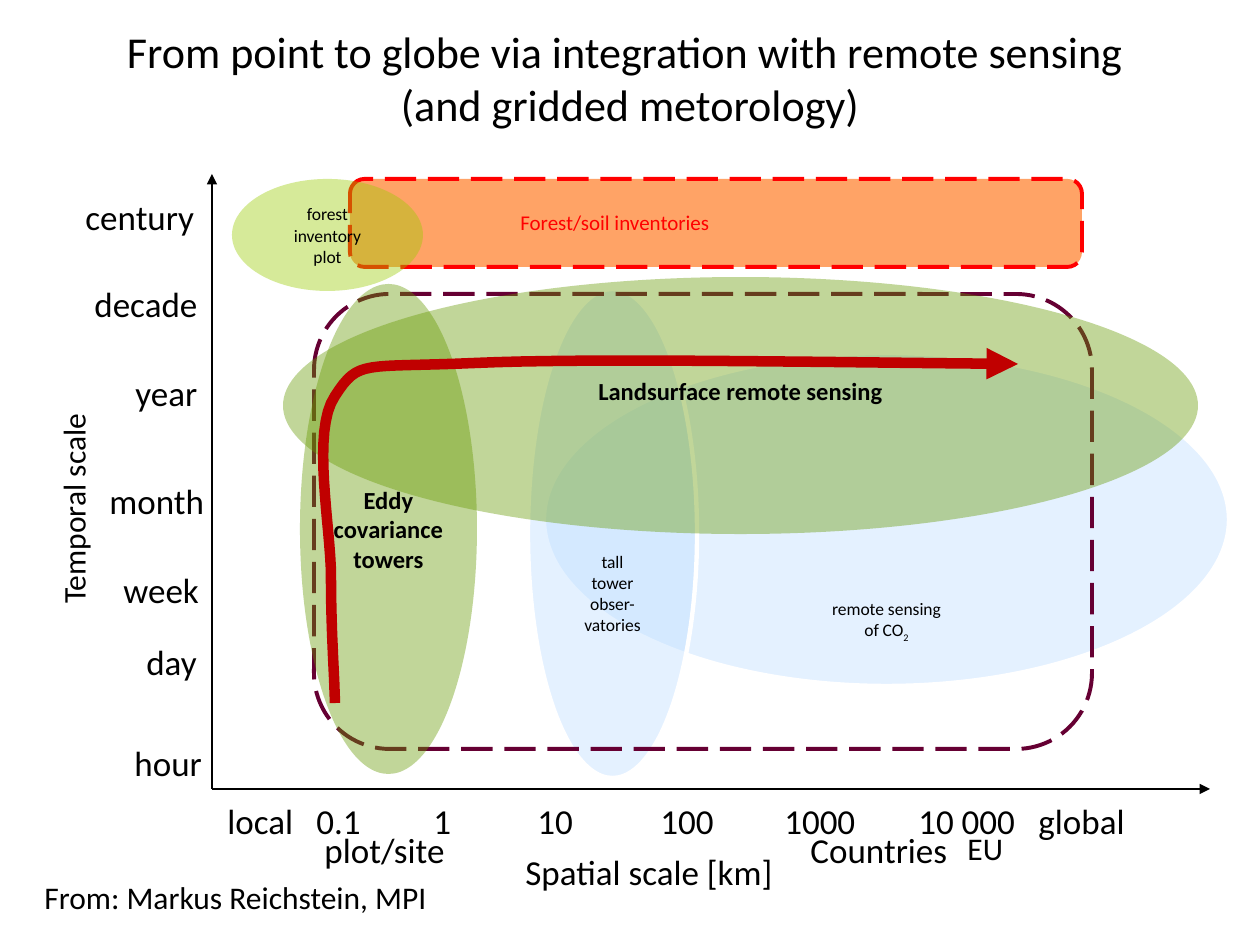
import pptx
import pptx.util
import pptx.dml.color
import pptx.enum.dml
import pptx.enum.shapes
import pptx.enum.text
import pptx.oxml
import pptx.oxml.ns

RGBColor = pptx.dml.color.RGBColor
Pt = pptx.util.Pt
Shape = pptx.enum.shapes.MSO_SHAPE
Anchor = pptx.enum.text.MSO_ANCHOR
Align = pptx.enum.text.PP_ALIGN

BLACK = RGBColor(0, 0, 0)
WHITE = RGBColor(255, 255, 255)
RED = RGBColor(0xFF, 0, 0)
ORANGE = RGBColor(0xFF, 0x66, 0)
LIGHT_BLUE = RGBColor(0xBD, 0xDE, 0xFF)
LIME = RGBColor(0x99, 0xCC, 0)
GREEN = RGBColor(0x66, 0x99, 0)
PLUM = RGBColor(0x66, 0, 0x33)
DARK_RED = RGBColor(0xC0, 0, 0)
PX = 914400 / 126


def px(*lengths):
    return [round(length * PX) for length in lengths]


def format_text(text_frame, size, color=BLACK, bold=False, align=Align.LEFT):
    for paragraph in text_frame.paragraphs:
        paragraph.alignment = align
        for run in paragraph.runs:
            run.font.name = "Calibri"
            run.font.size = Pt(size)
            run.font.bold = bold
            run.font.color.rgb = color


presentation = pptx.Presentation()
presentation.slide_width, presentation.slide_height = px(1260, 945)
slide = presentation.slides.add_slide(presentation.slide_layouts[5])

# Title
title = slide.shapes.title
title.left, title.top, title.width, title.height = px(63, 38, 1134, 78)
title.text_frame.text = (
    "From point to globe via integration with remote sensing \v(and gridded metorology)"
)
title.text_frame.vertical_anchor = Anchor.MIDDLE
title.text_frame.auto_size = pptx.enum.text.MSO_AUTO_SIZE.NONE
format_text(title.text_frame, 25.2, align=Align.CENTER)

# Axes
axes = []
for end_x, end_y in [(1210, 789), (212, 174)]:
    axis = slide.shapes.add_connector(
        pptx.enum.shapes.MSO_CONNECTOR.STRAIGHT, *px(212, 789, end_x, end_y)
    )
    axis.line.color.rgb = BLACK
    axis.line.width = Pt(0.75)
    axes.append(axis)

# Observation ranges, back to front:
# kind, box, fill, opacity %, line (colour, width, dashed), text, size, bold, anchor, bottom inset
RANGES = [
    (Shape.ROUNDED_RECTANGLE, (350, 179, 732, 88), ORANGE, 60, (RED, 2.25, True),
     "", 10, False, Anchor.MIDDLE, 6),
    (Shape.OVAL, (544, 353, 685, 333), LIGHT_BLUE, 40, (WHITE, 2.5, False),
     "remote sensing\vof CO", 10, False, Anchor.BOTTOM, -6),
    (Shape.OVAL, (232, 179, 191, 112), LIME, 40, None,
     "forest\vinventory\vplot", 10, False, Anchor.MIDDLE, 6),
    (Shape.OVAL, (528, 289, 169, 489), LIGHT_BLUE, 40, (WHITE, 2.5, False),
     "tall\vtower\vobser-\nvatories", 10, False, Anchor.BOTTOM, 71),
    (Shape.ROUNDED_RECTANGLE, (314, 294, 778, 455), None, 100, (PLUM, 2.25, True),
     "", 10, False, Anchor.MIDDLE, 6),
    (Shape.OVAL, (300, 284, 177, 490), GREEN, 40, None,
     "Eddy\vcovariance\vtowers", 14, True, Anchor.MIDDLE, 6),
    (Shape.OVAL, (283, 277, 915, 257), GREEN, 40, None,
     "Landsurface remote sensing", 14, True, Anchor.MIDDLE, 36),
]
for kind, box, fill, opacity, line, text, size, bold, anchor, inset in RANGES:
    shape = slide.shapes.add_shape(kind, *px(*box))
    shape.shadow.inherit = False
    if fill is None:
        shape.fill.background()
    else:
        shape.fill.solid()
        shape.fill.fore_color.rgb = fill
        color_element = shape.element.xpath("p:spPr/a:solidFill/a:srgbClr")[0]
        alpha = pptx.oxml.parse_xml(
            f'<a:alpha {pptx.oxml.ns.nsdecls("a")} val="{opacity * 1000}"/>'
        )
        color_element.append(alpha)
    if line is None:
        shape.line.fill.background()
    else:
        line_color, line_width, dashed = line
        shape.line.color.rgb = line_color
        shape.line.width = Pt(line_width)
        if dashed:
            shape.line.dash_style = pptx.enum.dml.MSO_LINE.LONG_DASH
    if text:
        text_frame = shape.text_frame
        text_frame.word_wrap = False
        text_frame.vertical_anchor = anchor
        text_frame.margin_bottom = px(inset)[0]
        text_frame.text = text
        if text.endswith("CO"):
            subscript = text_frame.paragraphs[0].add_run()
            subscript.text = "2"
        format_text(text_frame, size, bold=bold, align=Align.CENTER)
        if text.endswith("CO"):
            shape.element.xpath(".//a:rPr")[-1].set("baseline", "-25000")

# Labels: text, left, top, width, size, colour
LABELS = [
    ("century", 73, 189, 135, 20, BLACK),
    ("decade", 82, 276, 130, 20, BLACK),
    ("year", 123, 365, 88, 20, BLACK),
    ("month", 97, 473, 121, 20, BLACK),
    ("week", 111, 562, 102, 20, BLACK),
    ("day", 134, 634, 77, 20, BLACK),
    ("hour", 122, 735, 93, 20, BLACK),
    ("Spatial scale [km]", 513, 844, 276, 20, BLACK),
    ("plot/site", 312, 822, 147, 20, BLACK),
    ("Countries", 798, 822, 164, 20, BLACK),
    ("EU", 955, 823, 69, 18, BLACK),
    ("Forest/soil inventories", 508, 203, 217, 12, RED),
    ("From: Markus Reichstein, MPI", 32, 872, 412, 18, BLACK),
]
for text, left, top, width, size, color in LABELS:
    label = slide.shapes.add_textbox(*px(left, top, width, 13 + round(size * 2.13)))
    label.text_frame.word_wrap = False
    label.text_frame.text = text
    format_text(label.text_frame, size, color)

# Vertical axis title
axis_title = slide.shapes.add_textbox(*px(48, 388, 63, 228))
axis_title.text_frame.word_wrap = False
axis_title.text_frame.text = "Temporal scale"
axis_title.element.xpath(".//a:bodyPr")[0].set("vert", "vert270")
format_text(axis_title.text_frame, 18)

# Spatial scale ticks, set on tab stops
TICKS = ["local", "0.1", "1", "10", "100", "1000", "10 000", "global"]
TAB_STOPS = [89, 206, 310, 433, 557, 691, 811]
tick_row = slide.shapes.add_textbox(*px(215, 793, 945, 55))
tick_row.text_frame.word_wrap = True
tick_row.text_frame.text = "\t".join(TICKS)
format_text(tick_row.text_frame, 20)
tabs = "".join(f'<a:tab pos="{position}" algn="l"/>' for position in px(*TAB_STOPS))
tick_row.element.xpath(".//a:pPr")[0].append(
    pptx.oxml.parse_xml(f'<a:tabLst {pptx.oxml.ns.nsdecls("a")}>{tabs}</a:tabLst>')
)

# Upscaling arrow: cubic curves sampled into short steps
CURVES = [
    [(335, 703), (334, 667), (331, 629), (331, 577)],
    [(331, 577), (331, 527), (311, 431), (335, 396)],
    [(335, 396), (359, 359), (362, 368), (475, 363)],
    [(475, 363), (588, 358), (804, 362), (1018, 364)],
]
STEPS = 16
points = []
for start, control_1, control_2, end in CURVES:
    for step in range(1, STEPS + 1):
        t = step / STEPS
        weights = [(1 - t) ** 3, 3 * t * (1 - t) ** 2, 3 * t ** 2 * (1 - t), t ** 3]
        curve = list(zip(weights, (start, control_1, control_2, end)))
        points.append(px(sum(w * p[0] for w, p in curve), sum(w * p[1] for w, p in curve)))
builder = slide.shapes.build_freeform(*px(*CURVES[0][0]))
builder.add_line_segments(points, close=False)
arrow = builder.convert_to_shape()
arrow.shadow.inherit = False
arrow.fill.background()
arrow.line.color.rgb = DARK_RED
arrow.line.width = Pt(6)

# Arrowheads
for shape in axes + [arrow]:
    shape.element.xpath("p:spPr/a:ln")[0].append(
        pptx.oxml.parse_xml(f'<a:tailEnd {pptx.oxml.ns.nsdecls("a")} type="triangle"/>')
    )
for axis in axes:
    axis.element.xpath("p:spPr")[0].append(
        pptx.oxml.parse_xml(f'<a:effectLst {pptx.oxml.ns.nsdecls("a")}/>')
    )

presentation.save("out.pptx")
